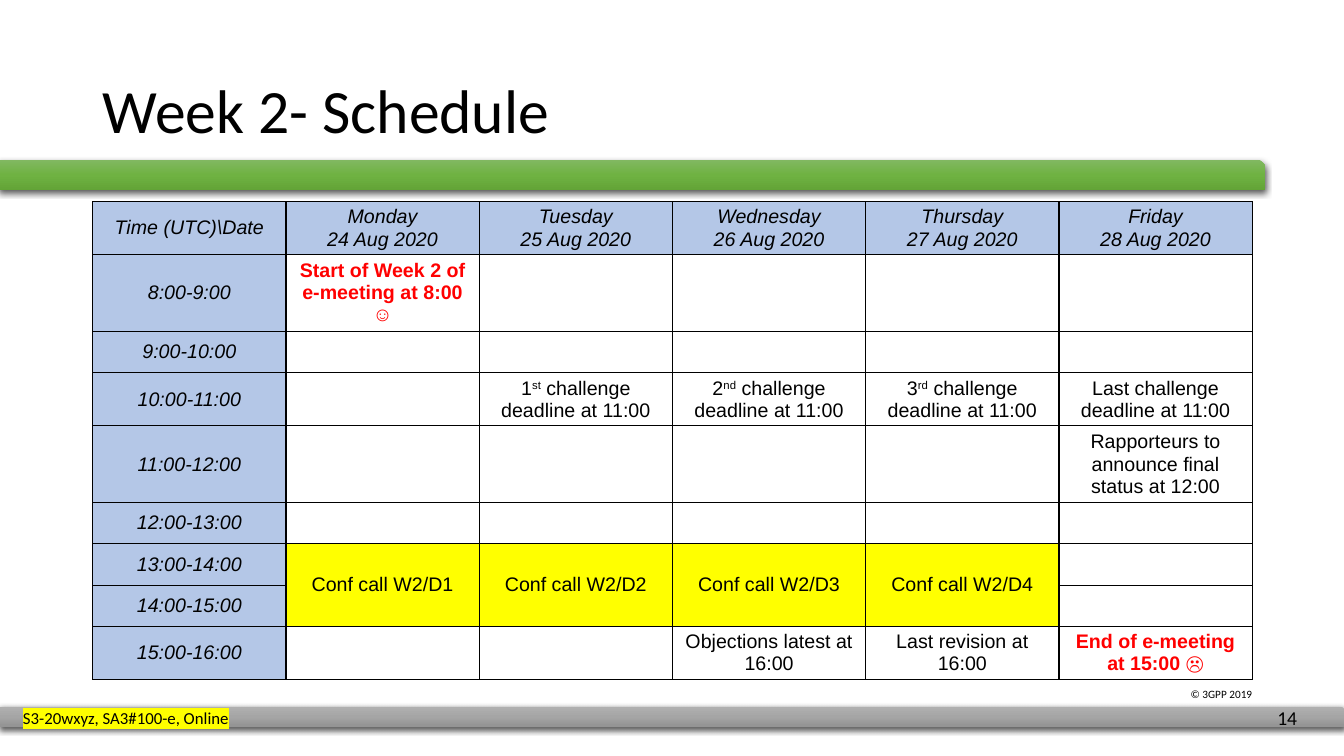
"""Build the week 2 meeting schedule slide."""
from dataclasses import dataclass
from typing import Optional

import pptx
import pptx.dml.color
import pptx.enum.shapes
import pptx.enum.text
import pptx.oxml
import pptx.oxml.ns
import pptx.util
from lxml import etree

Inches = pptx.util.Inches
Pt = pptx.util.Pt
qn = pptx.oxml.ns.qn

COLORS = {
    "text": "000000",
    "alert": "FF0000",
    "heading": "B4C7E7",
    "call": "FFFF00",
}
TIMES = [f"{hour}:00-{hour + 1}:00" for hour in range(8, 16)]
DAYS = ["Monday", "Tuesday", "Wednesday", "Thursday", "Friday"]


@dataclass
class Bar:
    left: float
    top: float
    width: float
    height: float
    stops: tuple[str, str, str]


@dataclass
class Label:
    text: str
    left: float
    top: float
    width: float
    height: float
    size: int
    wrap: bool = True
    highlight: Optional[str] = None
    line_spacing: Optional[float] = None
    middle: bool = False


@dataclass
class Entry:
    row: int
    column: int
    text: str
    color: str = "text"
    bold: bool = False
    italic: bool = False
    fill: Optional[str] = None
    row_span: int = 1


BARS = [
    Bar(0, 7.01, 13.34, 0.2, ("AFAFAF", "A5A5A5", "939393")),
    Bar(-0.01, 1.59, 12.56, 0.3, ("81B861", "6FB242", "62A336")),
]
LABELS = [
    Label("© 3GPP 2019", 11.71, 6.77, 1.08, 0.23, 8),
    Label("14", 12.57, 6.95, 0.43, 0.34, 14, wrap=False),
    Label("S3-20wxyz, SA3#100-e, Online", 0.13, 6.97, 4.4, 0.3, 12, highlight="call"),
    Label("Week 2- Schedule", 0.92, 0.4, 11.5, 1.45, 44, line_spacing=0.9, middle=True),
]
HEADINGS = ["Time (UTC)\\Date"] + [
    f"{day}\n{date} Aug 2020" for date, day in enumerate(DAYS, 24)
]
ENTRIES = [
    *(Entry(0, column, text, italic=True, fill="heading")
      for column, text in enumerate(HEADINGS)),
    *(Entry(row, 0, text, italic=True, fill="heading")
      for row, text in enumerate(TIMES, 1)),
    *(Entry(3, column, f"{ordinal} challenge deadline at 11:00")
      for column, ordinal in enumerate(["1^st^", "2^nd^", "3^rd^", "Last"], 2)),
    *(Entry(6, day, f"Conf call W2/D{day}", fill="call", row_span=2)
      for day in range(1, 5)),
    Entry(1, 1, "Start of Week 2 of e-meeting at 8:00 ☺", "alert", bold=True),
    Entry(4, 5, "Rapporteurs to announce final status at 12:00"),
    Entry(8, 3, "Objections latest at 16:00"),
    Entry(8, 4, "Last revision at 16:00"),
    Entry(8, 5, "End of e-meeting at 15:00 ☹", "alert", bold=True),
]


def rgb(name: str) -> pptx.dml.color.RGBColor:
    return pptx.dml.color.RGBColor.from_string(COLORS[name])


def add_color(parent: etree._Element, value: str) -> etree._Element:
    return etree.SubElement(parent, qn("a:srgbClr"), val=value)


def draw_bar(page: pptx.slide.Slide, bar: Bar) -> None:
    shape = page.shapes.add_shape(
        pptx.enum.shapes.MSO_SHAPE.SNIP_1_RECTANGLE,
        Inches(bar.left), Inches(bar.top), Inches(bar.width), Inches(bar.height))
    shape.line.fill.background()
    shape.fill.gradient()
    shape.fill.gradient_angle = 270
    properties = shape._element.spPr
    stop_list = properties.find(".//" + qn("a:gsLst"))
    for stop in list(stop_list):
        stop_list.remove(stop)
    for position, color in zip((0, 50000, 100000), bar.stops):
        add_color(etree.SubElement(stop_list, qn("a:gs"), pos=str(position)), color)
    shape.shadow.inherit = False
    shadow = etree.SubElement(
        properties.find(qn("a:effectLst")), qn("a:outerShdw"),
        blurRad=str(Pt(4.5)), dist=str(Pt(1.5)), dir="5400000",
        algn="ctr", rotWithShape="0")
    etree.SubElement(add_color(shadow, COLORS["text"]), qn("a:alpha"), val="63000")


def draw_label(page: pptx.slide.Slide, label: Label) -> None:
    box = page.shapes.add_textbox(
        Inches(label.left), Inches(label.top), Inches(label.width), Inches(label.height))
    frame = box.text_frame
    frame.text = label.text
    frame.word_wrap = label.wrap
    if label.middle:
        frame.vertical_anchor = pptx.enum.text.MSO_ANCHOR.MIDDLE
    para = frame.paragraphs[0]
    if label.line_spacing:
        para.line_spacing = label.line_spacing
    span = para.runs[0]
    span.font.name = "Calibri"
    span.font.size = Pt(label.size)
    span.font.color.rgb = rgb("text")
    if label.highlight:
        highlight = pptx.oxml.parse_xml(f'<a:highlight {pptx.oxml.ns.nsdecls("a")}/>')
        add_color(highlight, COLORS[label.highlight])
        span._r.rPr.find(qn("a:solidFill")).addnext(highlight)


def style_cell(cell: pptx.table._Cell) -> None:
    properties = cell._tc.get_or_add_tcPr()
    for side in ("a:lnL", "a:lnR", "a:lnT", "a:lnB"):
        border = etree.SubElement(properties, qn(side), w=str(Pt(1)))
        add_color(etree.SubElement(border, qn("a:solidFill")), COLORS["text"])
    cell.fill.background()
    cell.vertical_anchor = pptx.enum.text.MSO_ANCHOR.MIDDLE
    cell.margin_top = cell.margin_bottom = Inches(0.03)


def fill_cell(table: pptx.table.Table, entry: Entry) -> None:
    cell = table.cell(entry.row, entry.column)
    if entry.row_span > 1:
        cell.merge(table.cell(entry.row + entry.row_span - 1, entry.column))
    if entry.fill:
        cell.fill.solid()
        cell.fill.fore_color.rgb = rgb(entry.fill)
    first, *rest = entry.text.split("^")
    cell.text_frame.text = first
    for index, part in enumerate(rest):
        span = cell.text_frame.paragraphs[0].add_run()
        span.text = part
        if index % 2 == 0:
            span._r.get_or_add_rPr().set("baseline", "30000")
    for para in cell.text_frame.paragraphs:
        para.alignment = pptx.enum.text.PP_ALIGN.CENTER
        for span in para.runs:
            span.font.name = "Arial"
            span.font.size = Pt(14)
            span.font.bold = entry.bold
            span.font.italic = entry.italic
            span.font.color.rgb = rgb(entry.color)


def draw_schedule(page: pptx.slide.Slide) -> None:
    rows, columns = len(TIMES) + 1, len(HEADINGS)
    table = page.shapes.add_table(
        rows, columns, Inches(0.92), Inches(2), Inches(11.5), Inches(0.41 * rows)).table
    table.first_row = False
    table.horz_banding = False
    for cell in table.iter_cells():
        style_cell(cell)
    for entry in ENTRIES:
        fill_cell(table, entry)


def main() -> None:
    deck = pptx.Presentation()
    deck.slide_width = Inches(13.33)
    deck.slide_height = Inches(7.5)
    page = deck.slides.add_slide(deck.slide_layouts[6])
    for bar in BARS:
        draw_bar(page, bar)
    for label in LABELS:
        draw_label(page, label)
    draw_schedule(page)
    deck.save("out.pptx")


if __name__ == "__main__":
    main()
